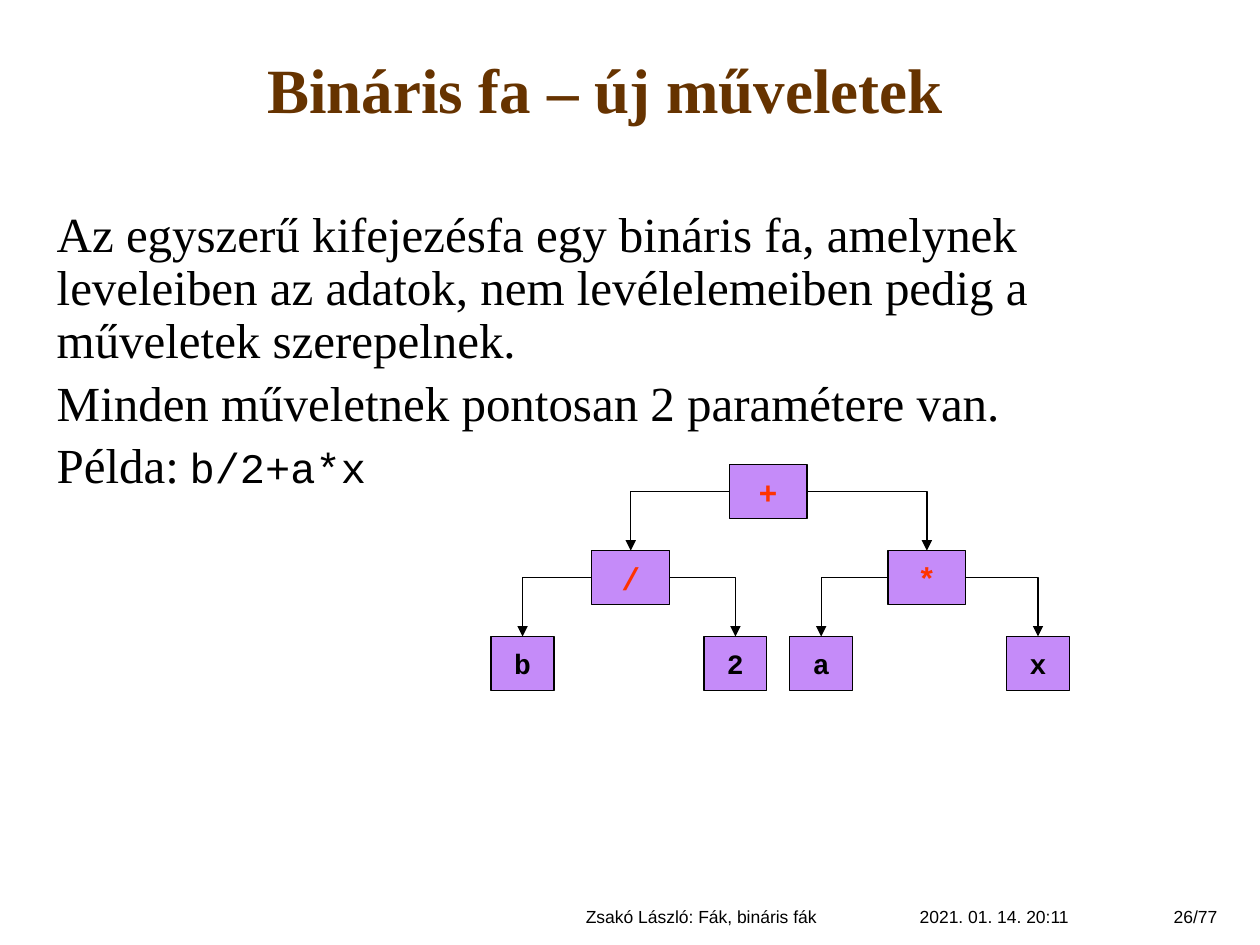
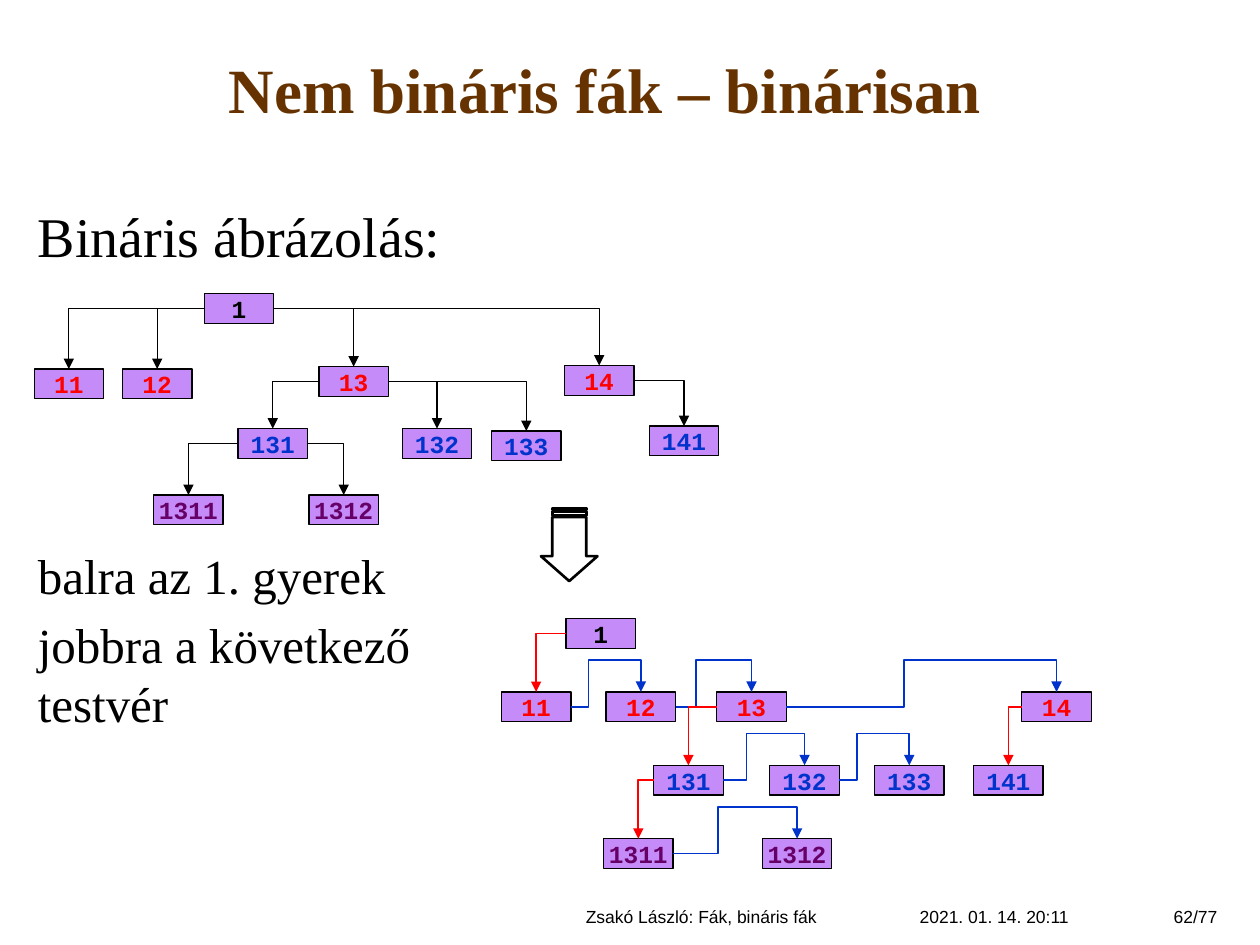
from collections import namedtuple

from pptx import Presentation
from pptx import util as u
from pptx.dml.color import RGBColor
from pptx.enum import shapes, text
from pptx.oxml import ns, xmlchemy

Cm, Pt = u.Cm, u.Pt
Box = namedtuple("Box", "left top width height")
Side = namedtuple("Side", "top left bottom right")(0, 1, 2, 3)

# Shared colours and fonts
BLACK = RGBColor(0x00, 0x00, 0x00)
BROWN = RGBColor(0x66, 0x33, 0x00)
LILAC = RGBColor(0xC5, 0x8B, 0xF9)
ORANGE = RGBColor(0xFF, 0x33, 0x00)
RED = RGBColor(0xFF, 0x00, 0x00)
BLUE = RGBColor(0x00, 0x33, 0xCC)
PURPLE = RGBColor(0x66, 0x00, 0x66)
LEVEL_COLOURS = [BLACK, RED, BLUE, PURPLE]
SERIF, SANS, MONO = "Times New Roman", "Arial", "Courier New"

# Shared places, in centimetres
TITLE_BOX = Box(3.5, 0.23, 17.4, 3.1)
FOOTER_TOP, FOOTER_HEIGHT = 18.14, 0.91
NODE_WIDTH, NODE_HEIGHT = 1.4, 0.6


def set_font(font, name, size, colour, bold=False):
    font.name, font.size, font.bold = name, Pt(size), bold
    font.color.rgb = colour


def move(shape, box):
    shape.left, shape.top, shape.width, shape.height = map(Cm, box)


def add_page(deck, title, number):
    """Add a page with the shared title and footer."""
    page = deck.slides.add_slide(deck.slide_layouts[1])
    heading = page.shapes.title
    move(heading, TITLE_BOX)
    frame = heading.text_frame
    frame.text = title
    frame.auto_size = text.MSO_AUTO_SIZE.NONE
    frame.vertical_anchor = text.MSO_ANCHOR.MIDDLE
    para = frame.paragraphs[0]
    para.alignment = text.PP_ALIGN.CENTER
    set_font(para.font, SERIF, 36, BROWN, True)

    # Footer: author and topic, date, page number
    align = text.PP_ALIGN
    for words, left, width, alignment in [
            ("Zsakó László: Fák, bináris fák", 10.11, 8.05, align.CENTER),
            ("2021. 01. 14. 20:11", 18.29, 4.19, align.LEFT),
            (f"{number}/77", 23.29, 1.5, align.RIGHT)]:
        label = page.shapes.add_textbox(
            *map(Cm, (left, FOOTER_TOP, width, FOOTER_HEIGHT)))
        label.text_frame.word_wrap = True
        para = label.text_frame.paragraphs[0]
        para.text, para.alignment = words, alignment
        set_font(para.font, SANS, 10, BLACK)
    return page


def fill_body(page, box, lines, line_spacing=1.0):
    """Write (words, size, space before) lines without bullets."""
    body = page.placeholders[1]
    move(body, box)
    frame = body.text_frame
    frame.auto_size = text.MSO_AUTO_SIZE.NONE
    for index, (words, size, space) in enumerate(lines):
        para = frame.add_paragraph() if index else frame.paragraphs[0]
        para.text = words
        props = para._p.get_or_add_pPr()
        props.set("marL", "0")
        props.set("indent", "0")
        props.append(xmlchemy.OxmlElement("a:buNone"))
        para.line_spacing, para.space_before = line_spacing, Pt(space)
        set_font(para.font, SERIF, size, BLACK)
    return frame


def add_node(page, box, label, size, colour):
    node = page.shapes.add_shape(shapes.MSO_SHAPE.RECTANGLE, *map(Cm, box))
    node.shadow.inherit = False
    node.fill.solid()
    node.fill.fore_color.rgb = LILAC
    node.line.color.rgb, node.line.width = BLACK, Pt(0.75)
    frame = node.text_frame
    frame.word_wrap = False
    frame.vertical_anchor = text.MSO_ANCHOR.MIDDLE
    para = frame.paragraphs[0]
    para.text, para.alignment = label, text.PP_ALIGN.CENTER
    set_font(para.font, MONO, size, colour, True)
    return node


def add_level_nodes(page, origin, places):
    """Place equal nodes; the label's length is the level in the tree."""
    return {label: add_node(page, Box(origin[0] + left, origin[1] + top,
                                      NODE_WIDTH, NODE_HEIGHT),
                            label, 14, LEVEL_COLOURS[len(label) - 1])
            for label, (left, top) in places.items()}


def link(page, start, end, side, colour=BLACK, width=0.75, bends=2, adjust=()):
    """Join one side of a node to the top of another with a bent arrow."""
    arrow = page.shapes.add_connector(shapes.MSO_CONNECTOR.ELBOW, 0, 0, 0, 0)
    arrow.begin_connect(start, side)
    arrow.end_connect(end, Side.top)
    arrow.line.color.rgb, arrow.line.width = colour, Pt(width)
    tail = xmlchemy.OxmlElement("a:tailEnd")
    tail.set("type", "triangle")
    arrow.line._get_or_add_ln().append(tail)
    props = arrow.element.spPr
    props.append(xmlchemy.OxmlElement("a:effectLst"))

    # Bend count and positions
    geometry = props.find(ns.qn("a:prstGeom"))
    geometry.set("prst", f"bentConnector{bends}")
    values = geometry.find(ns.qn("a:avLst"))
    for index, share in enumerate(adjust, 1):
        guide = xmlchemy.OxmlElement("a:gd")
        guide.set("name", f"adj{index}")
        guide.set("fmla", f"val {round(share * 100000)}")
        values.append(guide)


def link_child(page, parent, child):
    side = Side.right if child.left > parent.left else Side.left
    link(page, parent, child, side)


def link_sibling(page, node, sibling):
    gap = sibling.left - node.left - node.width
    run = gap + sibling.width / 2
    rise = 1 + 0.64 / (NODE_HEIGHT / 2)
    link(page, node, sibling, Side.right, BLUE, 1, 4, (gap / 2 / run, rise))


def draw_expression_tree(page, origin):
    left, top = origin
    level_step, height = 1.73, 1.09
    levels = [{"+": 4.8}, {"/": 2.03, "*": 8.0},
              {"b": 0, "2": 4.29, "a": 6.02, "x": 10.39}]
    nodes = {}
    for level, row in enumerate(levels):
        leaf = level == 2
        width, size, colour = (1.27, 16, BLACK) if leaf else (1.57, 18, ORANGE)
        for label, offset in row.items():
            box = Box(left + offset, top + level * level_step, width, height)
            nodes[label] = add_node(page, box, label, size, colour)
    for parent, children in {"+": "/*", "/": "b2", "*": "ax"}.items():
        for child in children:
            link_child(page, nodes[parent], nodes[child])


def draw_general_tree(page, origin):
    nodes = add_level_nodes(page, origin, {
        "1": (3.43, 0),
        "11": (0, 1.52), "12": (1.78, 1.52),
        "13": (5.74, 1.47), "14": (10.69, 1.45),
        "131": (4.11, 2.72), "132": (7.42, 2.72),
        "133": (9.22, 2.77), "141": (12.4, 2.67),
        "1311": (2.41, 4.06), "1312": (5.54, 4.06)})
    for label, node in nodes.items():
        if label != "1":
            link_child(page, nodes[label[:-1]], node)


def draw_binary_tree(page, origin):
    level_step = 1.48
    lefts = {"1": 1.3, "11": 0, "12": 2.11, "13": 4.34, "14": 10.49,
             "131": 3.07, "132": 5.41, "133": 7.52, "141": 9.52,
             "1311": 2.06, "1312": 5.26}
    nodes = add_level_nodes(page, origin, {
        label: (left, (len(label) - 1) * level_step)
        for label, left in lefts.items()})
    for label, node in nodes.items():
        first_child = nodes.get(label + "1")
        sibling = nodes.get(label[:-1] + str(int(label[-1]) + 1))
        if first_child:
            link(page, node, first_child, Side.left, RED, 1)
        if sibling:
            link_sibling(page, node, sibling)


def draw_down_arrow(page, box):
    arrow = page.shapes.add_shape(
        shapes.MSO_SHAPE.STRIPED_RIGHT_ARROW, *map(Cm, box))
    arrow.rotation = 90
    arrow.adjustments[0], arrow.adjustments[1] = 0.6, 0.44
    arrow.shadow.inherit = False
    arrow.fill.background()
    arrow.line.color.rgb, arrow.line.width = BLACK, Pt(1.5)


def build_expression_page(deck):
    page = add_page(deck, "Bináris fa – új műveletek", 26)
    frame = fill_body(page, Box(0.89, 4.11, 23.9, 11.63), [
        ("Az egyszerű kifejezésfa egy bináris fa, amelynek leveleiben az "
         "adatok, nem levélelemeiben pedig a műveletek szerepelnek.", 28, 0),
        ("Minden műveletnek pontosan 2 paramétere van.", 28, 5.6),
        ("Példa:", 28, 5.6)], 0.9)
    for words, name in [(" ", SERIF), ("b/2+a*x", MONO)]:
        span = frame.paragraphs[-1].add_run()
        span.text, span.font.name, span.font.size = words, name, Pt(24)
    draw_expression_tree(page, (9.9, 9.37))


def build_binary_page(deck):
    page = add_page(deck, "Nem bináris fák – binárisan", 62)
    fill_body(page, Box(0.51, 3.94, 24.4, 11.33), [
        ("Bináris ábrázolás:", 32, 0),
        ("balra az 1. gyerek", 28, 158),
        ("jobbra a következő\vtestvér", 28, 6)])
    draw_general_tree(page, (0.69, 5.92))
    draw_down_arrow(page, Box(10.74, 10.41, 1.47, 1.14))
    draw_binary_tree(page, (10.11, 12.47))


def main():
    deck = Presentation()
    deck.slide_width, deck.slide_height = Cm(25.4), Cm(19.05)
    build_expression_page(deck)
    build_binary_page(deck)
    deck.save("out.pptx")


if __name__ == "__main__":
    main()
